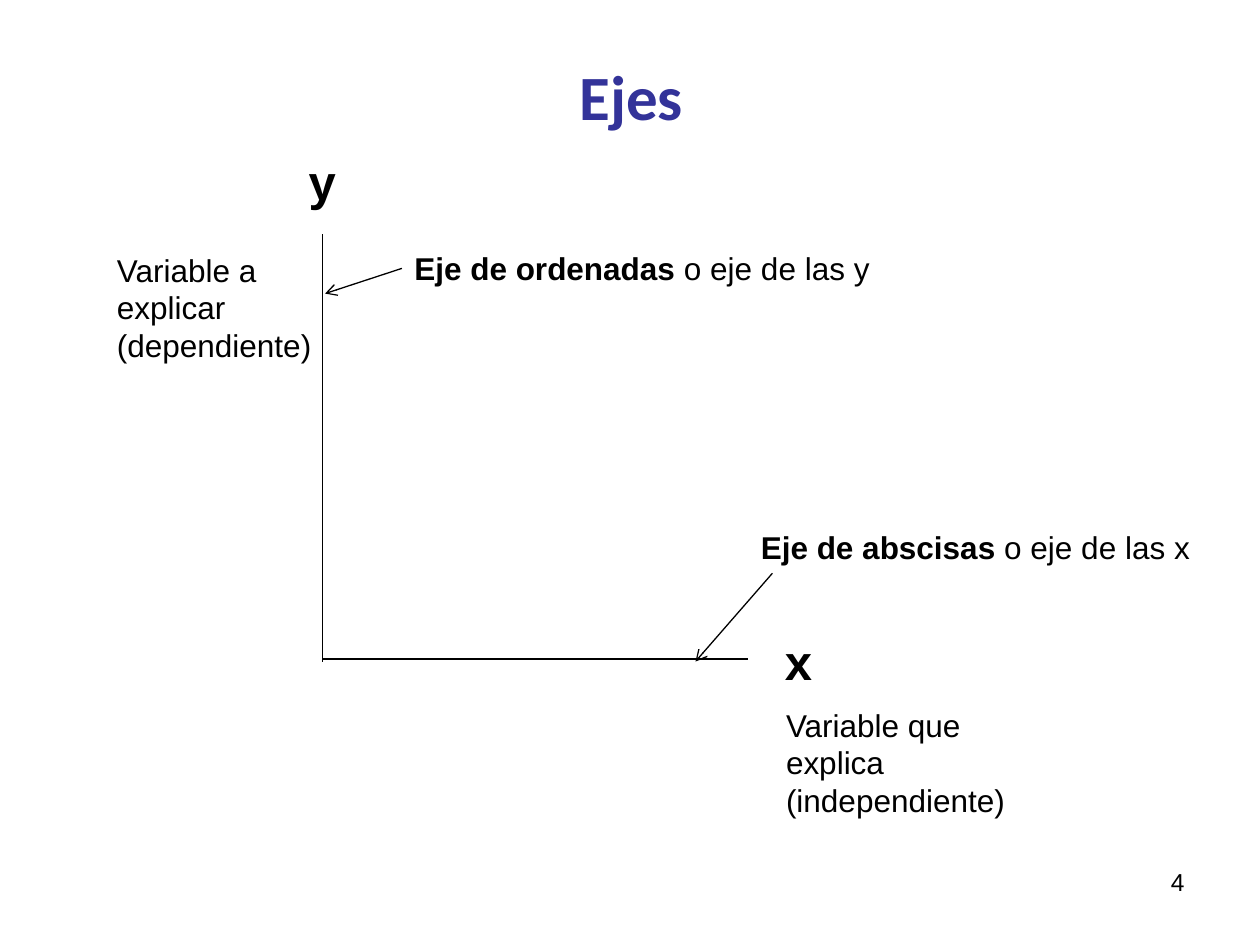
from dataclasses import dataclass

from lxml import etree
from pptx import Presentation
from pptx.dml.color import RGBColor
from pptx.enum.shapes import MSO_CONNECTOR
from pptx.enum.text import MSO_ANCHOR, MSO_AUTO_SIZE, PP_ALIGN
from pptx.oxml.ns import qn
from pptx.util import Inches, Pt

STRAIGHT = MSO_CONNECTOR.STRAIGHT
MIDDLE = MSO_ANCHOR.MIDDLE
FIT_SHAPE = MSO_AUTO_SIZE.SHAPE_TO_FIT_TEXT
NO_FIT = MSO_AUTO_SIZE.NONE
LEFT, CENTER, RIGHT = PP_ALIGN.LEFT, PP_ALIGN.CENTER, PP_ALIGN.RIGHT
LEFT_SIDE = 1
COLORS = {"ink": "000000", "title": "333399"}
CELL = Inches(0.1)
COLUMNS, ROWS = 100, 75


@dataclass
class Box:
    column: float
    row: float
    columns: float
    rows: float

    def inner(self, column, row, columns, rows):
        return Box(self.column + column, self.row + row, columns, rows)

    def point(self, column, row):
        return cells(self.column + column), cells(self.row + row)

    def frame(self):
        return tuple(map(cells, (self.column, self.row, self.columns, self.rows)))


def cells(count):
    return round(count * CELL)


def write(frame, paragraphs, size=18, font="Arial", color="ink", align=LEFT):
    for index, runs in enumerate(paragraphs):
        paragraph = frame.paragraphs[0] if index == 0 else frame.add_paragraph()
        paragraph.alignment = align
        for text, bold in runs:
            run = paragraph.add_run()
            run.text = text
            run.font.name = font
            run.font.size = Pt(size)
            run.font.bold = bold
            run.font.color.rgb = RGBColor.from_string(COLORS[color])


def add_text(slide, box, paragraphs, wrap=False, **text_format):
    shape = slide.shapes.add_textbox(*box.frame())
    shape.text_frame.word_wrap = wrap
    shape.text_frame.auto_size = NO_FIT if wrap else FIT_SHAPE
    write(shape.text_frame, paragraphs, **text_format)
    return shape


def add_line(slide, start, end, arrow=False):
    connector = slide.shapes.add_connector(STRAIGHT, *start, *end)
    connector.line.width = Pt(0.75)
    connector.line.color.rgb = RGBColor.from_string(COLORS["ink"])
    if arrow:
        outline = connector.line._get_or_add_ln()
        etree.SubElement(outline, qn("a:tailEnd"), type="arrow")
    etree.SubElement(connector._element.spPr, qn("a:effectLst"))
    return connector


def add_title(slide, box, text):
    title = slide.shapes.title
    title.left, title.top, title.width, title.height = box.frame()
    title.text_frame.vertical_anchor = MIDDLE
    write(title.text_frame, [[(text, True)]],
          size=36, font="Calibri", color="title", align=CENTER)


def add_axes(slide, box):
    bottom = box.rows - 0.2
    add_line(slide, box.point(0, 0), box.point(0, box.rows))
    add_line(slide, box.point(0, bottom), box.point(box.columns, bottom))


def add_variable(slide, letter_box, description_box, letter, lines):
    add_text(slide, description_box, [[(line, False)] for line in lines])
    add_text(slide, letter_box, [[(letter, True)]], size=28)


def add_axis_name(slide, box, name, alias):
    return add_text(slide, box, [[(name, True), (alias, False)]])


def add_diagram(slide, box):
    add_axes(slide, box)
    add_variable(slide, box.inner(-2.1, -7.1, 4.2, 5.7),
                 box.inner(-17.3, 0.8, 17.6, 10.1),
                 "y", ["Variable a", "explicar", "(dependiente)"])
    add_variable(slide, box.inner(35.7, 31, 4.2, 5.7),
                 box.inner(35.8, 36.9, 19.6, 10.1),
                 "x", ["Variable que", "explica", "(independiente)"])
    ordinate = add_axis_name(slide, box.inner(6.3, 0.7, 38.5, 4),
                             "Eje de ordenadas ", "o eje de las y")
    add_axis_name(slide, box.inner(33.8, 22.8, 36.4, 4),
                  "Eje de abscisas ", "o eje de las x")
    arrow = add_line(slide, box.point(6.3, 2.7), box.point(0.2, 4.7), arrow=True)
    arrow.begin_connect(ordinate, LEFT_SIDE)
    add_line(slide, box.point(35.7, 26.9), box.point(29.6, box.rows), arrow=True)


def add_page_number(slide, box, number):
    add_text(slide, box, [[(number, False)]], wrap=True, size=14, align=RIGHT)


def main():
    presentation = Presentation()
    presentation.slide_width = cells(COLUMNS)
    presentation.slide_height = cells(ROWS)
    slide = presentation.slides.add_slide(presentation.slide_layouts[5])
    page = Box(0, 0, COLUMNS, ROWS)
    add_page_number(slide, page.inner(71.7, 68.3, 23.3, 5.2), "4")
    add_title(slide, page.inner(5.1, 1.3, 90, 12.5), "Ejes")
    add_diagram(slide, page.inner(25.6, 18.6, 33.8, 33.9))
    presentation.save("out.pptx")


if __name__ == "__main__":
    main()
